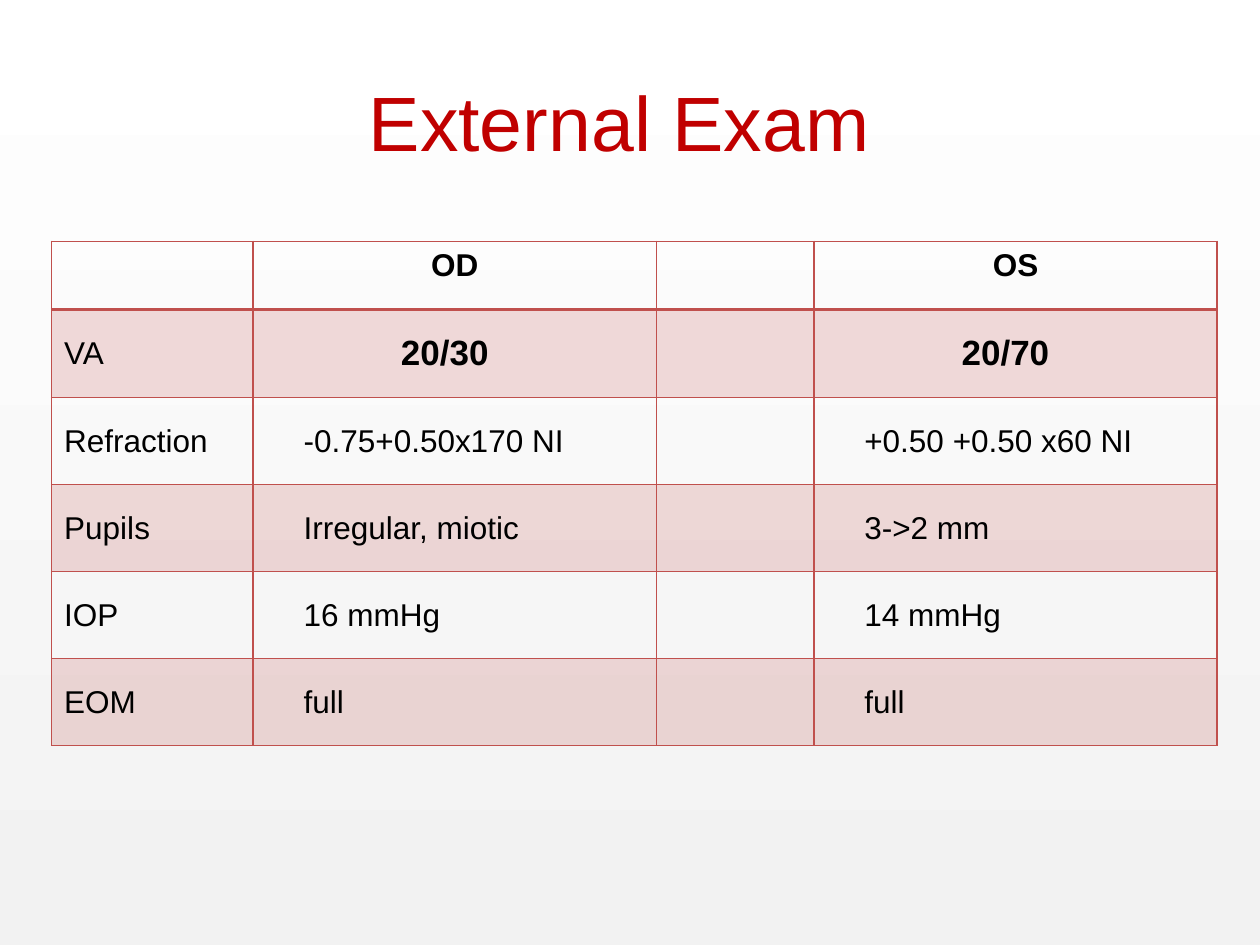
from pptx import Presentation
from pptx.dml.color import RGBColor
from pptx.enum.shapes import MSO_SHAPE
from pptx.enum.text import MSO_ANCHOR, PP_ALIGN
from pptx.oxml.ns import qn
from pptx.util import Pt
from lxml.etree import SubElement

COLORS = {
    "title": "C00000",
    "text": "000000",
    "accent": "C0504D",
    "top": "FFFFFF",
    "bottom": "F2F2F2",
}
COLUMN_WIDTHS = [115.2, 230.4, 90, 230.4]
ROW_HEIGHTS = [38.9, 50.4] + [49.7] * 4
EXAM_ROWS = [
    ["", "OD", "", "OS"],
    ["VA", "20/30", "", "20/70"],
    ["Refraction", "-0.75+0.50x170 NI", "", "+0.50 +0.50 x60 NI"],
    ["Pupils", "Irregular, miotic", "", "3->2 mm"],
    ["IOP", "16 mmHg", "", "14 mmHg"],
    ["EOM", "full", "", "full"],
]


class SlideBuilder:
    font_name = "Arial"

    def __init__(self, slide):
        self.slide = slide

    def color(self, name):
        return RGBColor.from_string(COLORS[name])

    def add_run(self, paragraph, text, size, color="text", bold=False):
        run = paragraph.add_run()
        run.text = text
        run.font.name = self.font_name
        run.font.size = Pt(size)
        run.font.bold = bold
        run.font.color.rgb = self.color(color)

    def add_backdrop(self, width, height):
        shape = self.slide.shapes.add_shape(MSO_SHAPE.RECTANGLE, 0, 0, width, height)
        shape.shadow.inherit = False
        shape.line.fill.background()
        shape.fill.gradient()
        shape.fill.gradient_angle = 90
        for stop, name, position in zip(shape.fill.gradient_stops, ("bottom", "top"), (0, 1)):
            stop.color.rgb = self.color(name)
            stop.position = position

    def add_title(self, text, left, top, width, height):
        shape = self.slide.shapes.add_textbox(Pt(left), Pt(top), Pt(width), Pt(height))
        frame = shape.text_frame
        frame.word_wrap = True
        frame.vertical_anchor = MSO_ANCHOR.MIDDLE
        paragraph = frame.paragraphs[0]
        paragraph.alignment = PP_ALIGN.CENTER
        self.add_run(paragraph, text, 44, "title")

    def set_borders(self, cell, bottom_width, top_width):
        properties = cell._tc.get_or_add_tcPr()
        widths = {"a:lnL": 1, "a:lnR": 1, "a:lnT": top_width, "a:lnB": bottom_width}
        for tag, width in widths.items():
            line = SubElement(properties, qn(tag), w=str(Pt(width)))
            fill = SubElement(line, qn("a:solidFill"))
            SubElement(fill, qn("a:srgbClr"), val=COLORS["accent"])

    def set_fill(self, cell, banded):
        if not banded:
            cell.fill.background()
            return
        cell.fill.solid()
        cell.fill.fore_color.rgb = self.color("accent")
        color = cell._tc.tcPr.find(qn("a:solidFill")).find(qn("a:srgbClr"))
        SubElement(color, qn("a:alpha"), val="20000")

    def fill_cell(self, cell, text, row, column):
        is_header = row == 0
        is_value = column in (1, 3) and not is_header
        is_acuity = is_value and row == 1
        self.set_borders(cell, 2 if is_header else 1, 2 if row == 1 else 1)
        self.set_fill(cell, row % 2 == 1)
        if not is_header:
            cell.vertical_anchor = MSO_ANCHOR.MIDDLE
        if is_value:
            cell.margin_left = Pt(84.4 if is_acuity else 28.8)
        if text:
            paragraph = cell.text_frame.paragraphs[0]
            paragraph.alignment = PP_ALIGN.CENTER if is_header else PP_ALIGN.LEFT
            self.add_run(paragraph, text, 20 if is_acuity else 18, bold=is_header or is_acuity)

    def add_table(self, rows, left, top):
        table = self.slide.shapes.add_table(
            len(rows), len(COLUMN_WIDTHS), Pt(left), Pt(top),
            Pt(sum(COLUMN_WIDTHS)), Pt(sum(ROW_HEIGHTS)),
        ).table
        table.first_row = False
        table.horz_banding = False
        for column, width in zip(table.columns, COLUMN_WIDTHS):
            column.width = Pt(width)
        for row, height in zip(table.rows, ROW_HEIGHTS):
            row.height = Pt(height)
        for row, texts in enumerate(rows):
            for column, text in enumerate(texts):
                self.fill_cell(table.cell(row, column), text, row, column)


def main():
    presentation = Presentation()
    presentation.slide_width = Pt(720)
    presentation.slide_height = Pt(540)
    builder = SlideBuilder(presentation.slides.add_slide(presentation.slide_layouts[6]))
    builder.add_backdrop(presentation.slide_width, presentation.slide_height)
    builder.add_table(EXAM_ROWS, 29.5, 138)
    builder.add_title("External Exam", 30, 24, 648, 90)
    presentation.save("out.pptx")


if __name__ == "__main__":
    main()
